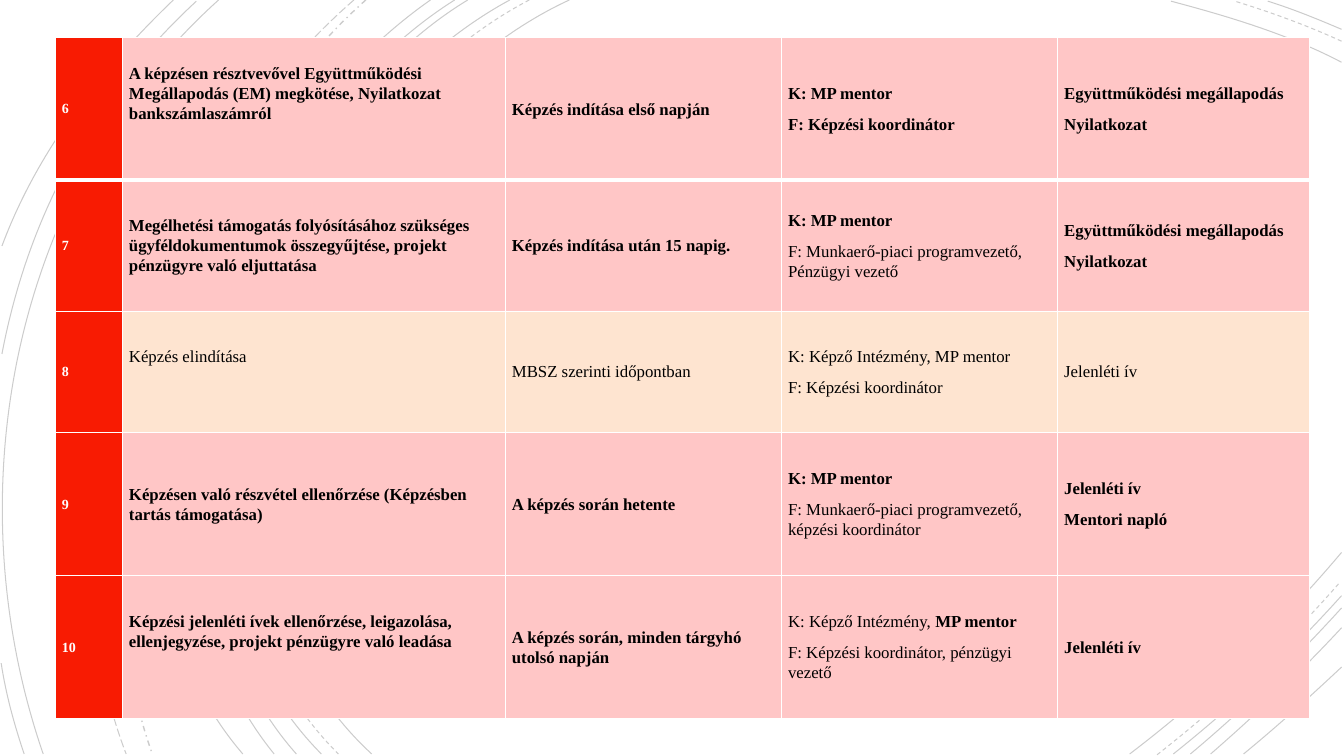
from dataclasses import dataclass

from lxml.etree import SubElement
from pptx import Presentation
from pptx.dml.color import RGBColor
from pptx.enum.dml import MSO_LINE_DASH_STYLE as Dash
from pptx.enum.text import MSO_VERTICAL_ANCHOR as Anchor
from pptx.oxml.ns import qn
from pptx.util import Cm, Pt


@dataclass(frozen=True)
class Theme:
    font: str = "Times New Roman"
    number_size: float = 10
    body_size: float = 12
    red: str = "F81B02"
    pink: str = "FFC6C6"
    peach: str = "FEE4D0"
    white: str = "FFFFFF"
    black: str = "000000"


@dataclass(frozen=True)
class Span:
    text: str
    bold: bool = False


@dataclass(frozen=True)
class Step:
    number: int
    cells: tuple
    fill: str
    raised: bool = False


THEME = Theme()
COLUMN_WIDTHS = (1.69, 9.65, 6.96, 6.96, 6.35)
ROW_HEIGHTS = (3.6, 3.3, 3.05, 3.61, 3.61)
RAISED_MARGIN = 0.8
ALPHA_PERCENT = 20

SOLID_CURVES = (
    ((14.35, 0), (8, 2.92), (3.63, 13.72), (9.37, 19)),
    ((33.81, 1.57), (32.46, 0.86), (30.94, 0.41), (29.51, 0.03)),
    ((28.47, 19), (30.4, 17.53), (32.23, 15.8), (33.81, 13.92)),
    ((12.85, 0), (6.86, 3.23), (2.79, 13.64), (8.1, 19)),
    ((33.81, 0.74), (33.2, 0.48), (32.59, 0.23), (31.95, 0.03)),
    ((29.57, 19), (31.06, 17.81), (32.51, 16.46), (33.81, 15.01)),
    ((11.79, 0), (6.2, 3.38), (2.79, 13.74), (7.47, 19)),
    ((30, 19), (31.34, 17.88), (32.61, 16.64), (33.81, 15.32)),
    ((11.46, 0), (5.87, 3.51), (2.46, 13.54), (6.91, 19)),
    ((30.51, 19), (31.65, 18.01), (32.77, 16.94), (33.81, 15.82)),
    ((10.85, 0), (5.51, 3.73), (1.35, 13.44), (6.12, 19)),
    ((31.34, 19), (32.18, 18.31), (32.99, 17.58), (33.81, 16.81)),
    ((5.51, 0), (0.28, 4.7), (-1.17, 12.45), (1.09, 19)),
    ((4.95, 0.03), (2.34, 2.44), (0.71, 5.44), (0.05, 8.92)),
    ((0.03, 16.71), (0.15, 17.5), (0.36, 18.26), (0.61, 19)),
    ((4.37, 0), (2.54, 1.75), (0.94, 3.81), (0.05, 6.2)),
)
DASHED_CURVES = (
    ((13.34, 0), (7.24, 3.18), (3.12, 13.64), (8.53, 19)),
    ((33.81, 1.04), (32.94, 0.64), (32, 0.3), (31.12, 0.03)),
    ((29.16, 19.02), (30.81, 17.73), (32.39, 16.26), (33.78, 14.66)),
)
DASH_DOT_CURVES = (((9.22, 0), (4.47, 4.22), (1.65, 12.93), (3.84, 19)),)
LONG_DASH_CURVES = (((8.92, 0), (3.99, 4.29), (0.74, 12.67), (3.18, 19)),)
CURVE_STYLES = (
    (SOLID_CURVES, Dash.SOLID, 0.75),
    (DASHED_CURVES, Dash.DASH, 0.75),
    (DASH_DOT_CURVES, Dash.DASH_DOT, 1),
    (LONG_DASH_CURVES, Dash.LONG_DASH, 0.75),
)


def bold(text):
    return (Span(text, True),)


def plain(text):
    return (Span(text),)


MENTOR = bold("K: MP mentor")
AGREEMENT = (bold("Együttműködési megállapodás"), bold("Nyilatkozat"))
ATTENDANCE = bold("Jelenléti ív")

STEPS = (
    Step(6, (
        (bold("A képzésen résztvevővel Együttműködési Megállapodás (EM) megkötése, "
              "Nyilatkozat bankszámlaszámról"),),
        (bold("Képzés indítása első napján"),),
        (MENTOR, bold("F: Képzési koordinátor")),
        AGREEMENT,
    ), THEME.pink, raised=True),
    Step(7, (
        (bold("Megélhetési támogatás folyósításához szükséges ügyféldokumentumok "
              "összegyűjtése, projekt pénzügyre való eljuttatása"),),
        (bold("Képzés indítása után 15 napig."),),
        (MENTOR, plain("F: Munkaerő-piaci programvezető, Pénzügyi vezető")),
        AGREEMENT,
    ), THEME.pink),
    Step(8, (
        (plain("Képzés elindítása"),),
        (plain("MBSZ szerinti időpontban"),),
        (plain("K: Képző Intézmény, MP mentor"), plain("F: Képzési koordinátor")),
        (plain("Jelenléti ív"),),
    ), THEME.peach, raised=True),
    Step(9, (
        (bold("Képzésen való részvétel ellenőrzése (Képzésben tartás támogatása)"),),
        (bold("A képzés során hetente"),),
        (MENTOR, plain("F: Munkaerő-piaci programvezető, képzési koordinátor")),
        (ATTENDANCE, bold("Mentori napló")),
    ), THEME.pink),
    Step(10, (
        (bold("Képzési jelenléti ívek ellenőrzése, leigazolása, ellenjegyzése, "
              "projekt pénzügyre való leadása"),),
        (bold("A képzés során, minden tárgyhó utolsó napján"),),
        (plain("K: Képző Intézmény, ") + bold("MP mentor"),
         plain("F: Képzési koordinátor, pénzügyi vezető")),
        (ATTENDANCE,),
    ), THEME.pink, raised=True),
)


def bend(curve):
    outline = curve._element.find(".//" + qn("a:path"))
    segments = outline.findall(qn("a:lnTo"))
    bezier = SubElement(outline, qn("a:cubicBezTo"))
    for segment in segments:
        bezier.append(segment[0])
        outline.remove(segment)


def add_curve(page, corners, dash, width):
    start, *rest = [(Cm(x), Cm(y)) for x, y in corners]
    builder = page.shapes.build_freeform(*start)
    builder.add_line_segments(rest, close=False)
    curve = builder.convert_to_shape()
    bend(curve)
    curve.shadow.inherit = False
    curve.fill.background()
    curve.line.width = Pt(width)
    curve.line.color.rgb = RGBColor.from_string(THEME.black)
    curve.line.dash_style = dash
    color = curve._element.find(".//" + qn("a:ln")).find(".//" + qn("a:srgbClr"))
    SubElement(color, qn("a:alpha"), val=str(ALPHA_PERCENT * 1000))


def set_borders(cell, top, bottom):
    properties = cell._tc.get_or_add_tcPr()
    for side, width in (("L", 1), ("R", 1), ("T", top), ("B", bottom)):
        line = SubElement(properties, qn(f"a:ln{side}"), w=str(Pt(width)))
        fill = SubElement(line, qn("a:solidFill"))
        SubElement(fill, qn("a:srgbClr"), val=THEME.white)


def fill_cell(cell, paragraphs, fill, size, color):
    cell.fill.solid()
    cell.fill.fore_color.rgb = RGBColor.from_string(fill)
    cell.vertical_anchor = Anchor.MIDDLE
    cell.margin_left = cell.margin_right = Cm(0.17)
    cell.margin_top = cell.margin_bottom = Cm(0)
    frame = cell.text_frame
    for index, spans in enumerate(paragraphs):
        para = frame.add_paragraph() if index else frame.paragraphs[0]
        para.line_spacing = 1.07
        para.space_after = Pt(8)
        for span in spans:
            run = para.add_run()
            run.text = span.text
            run.font.name = THEME.font
            run.font.size = Pt(size)
            run.font.bold = span.bold
            run.font.color.rgb = RGBColor.from_string(color)


def add_step_table(page):
    frame = page.shapes.add_table(len(STEPS), len(COLUMN_WIDTHS), Cm(1.39), Cm(0.94),
                                  Cm(sum(COLUMN_WIDTHS)), Cm(sum(ROW_HEIGHTS)))
    table = frame.table
    for column, width in zip(table.columns, COLUMN_WIDTHS):
        column.width = Cm(width)
    for index, (row, height, step) in enumerate(zip(table.rows, ROW_HEIGHTS, STEPS)):
        row.height = Cm(height)
        number, *details = row.cells
        for cell in row.cells:
            set_borders(cell, 3 if index == 1 else 1, 3 if index == 0 else 1)
        fill_cell(number, (bold(str(step.number)),), THEME.red, THEME.number_size, THEME.white)
        for cell, paragraphs in zip(details, step.cells):
            fill_cell(cell, paragraphs, step.fill, THEME.body_size, THEME.black)
        if step.raised:
            details[0].margin_bottom = Cm(RAISED_MARGIN)


def main():
    deck = Presentation()
    deck.slide_width, deck.slide_height = Cm(33.87), Cm(19.05)
    page = deck.slides.add_slide(deck.slide_layouts[6])
    for curves, dash, width in CURVE_STYLES:
        for corners in curves:
            add_curve(page, corners, dash, width)
    add_step_table(page)
    deck.save("out.pptx")


if __name__ == "__main__":
    main()
